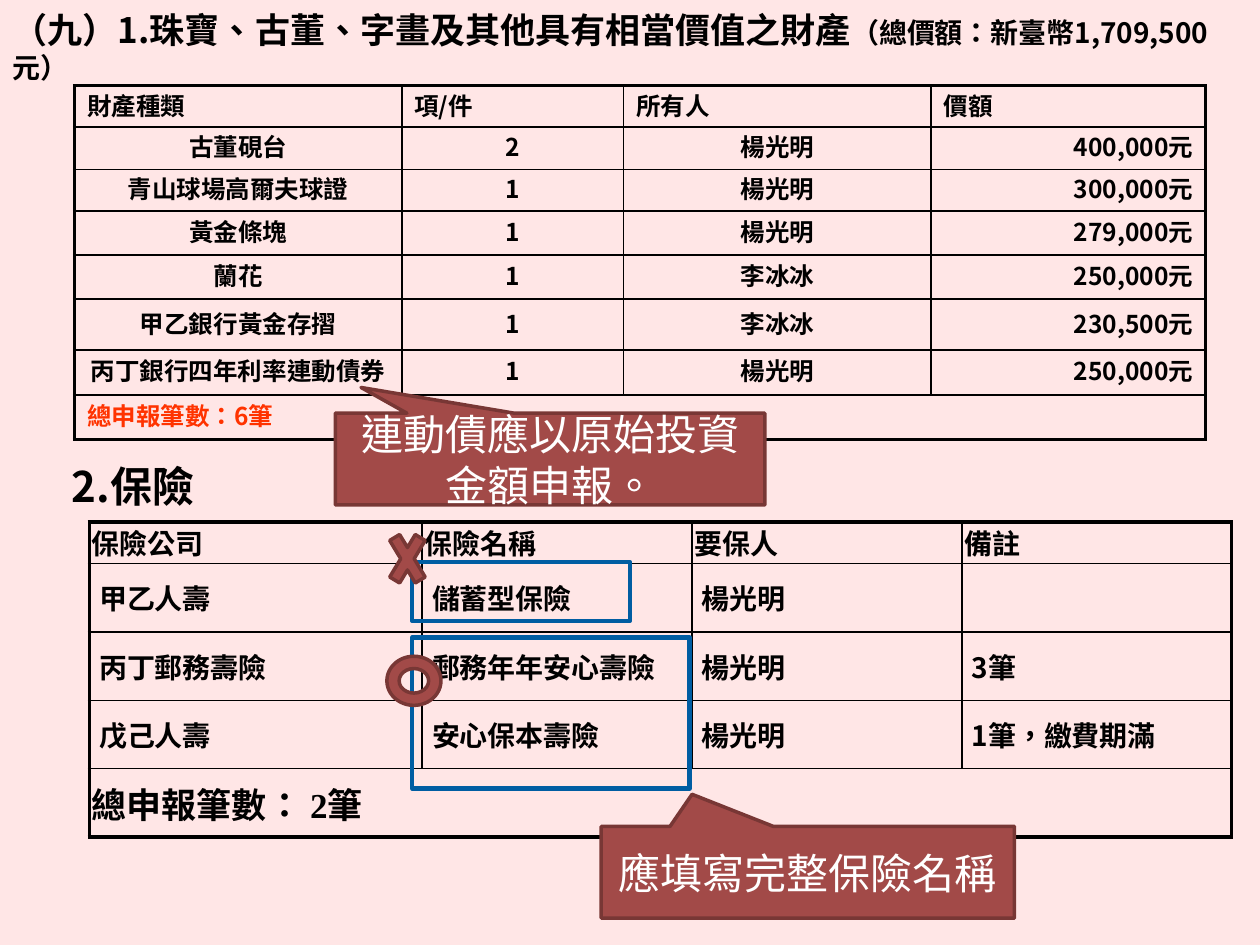
from lxml import etree
from pptx import Presentation
from pptx.dml.color import RGBColor
from pptx.enum.shapes import MSO_SHAPE
from pptx.enum.text import MSO_ANCHOR, MSO_AUTO_SIZE, PP_ALIGN
from pptx.oxml.ns import qn
from pptx.util import Cm, Pt

LEFT, CENTER, RIGHT, JUSTIFY = PP_ALIGN.LEFT, PP_ALIGN.CENTER, PP_ALIGN.RIGHT, PP_ALIGN.JUSTIFY
MIDDLE, NO_FIT = MSO_ANCHOR.MIDDLE, MSO_AUTO_SIZE.NONE
RECTANGLE, CALLOUT = MSO_SHAPE.RECTANGLE, MSO_SHAPE.RECTANGULAR_CALLOUT
CROSS, RING = MSO_SHAPE.MATH_MULTIPLY, MSO_SHAPE.DONUT

COLORS = {"background": "FFE6E6", "ink": "000000", "total": "FF3300", "frame": "005DA2",
          "mark": "A24A48", "mark_line": "783735", "white": "FFFFFF"}
COLORS_RGB = {name: RGBColor.from_string(value) for name, value in COLORS.items()}
SANS, SERIF = "Noto Sans CJK SC", "Times New Roman"


def add_text(para, text, size, color="ink", bold=True, latin=SANS):
    span = para.add_run()
    span.text = text
    span.font.name = latin
    span.font.size = Pt(size)
    span.font.bold = bold
    span.font.color.rgb = COLORS_RGB[color]
    properties = span.font._element
    properties.set("lang", "zh-TW")
    east_asian = etree.Element(qn("a:ea"), typeface=SANS)
    properties.find(qn("a:latin")).addnext(east_asian)


def make_table(left, top, widths, heights, outer):
    """Add an unfilled table with thin inner lines, a heavy frame and a merged last row."""
    rows, columns = len(heights), len(widths)
    table = page.shapes.add_table(rows, columns, Cm(left), Cm(top),
                                  Cm(sum(widths)), Cm(sum(heights))).table
    table.first_row = table.horz_banding = False
    for column, width in zip(table.columns, widths):
        column.width = Cm(width)
    for row, height in zip(table.rows, heights):
        row.height = Cm(height)
    table.cell(rows - 1, 0).merge(table.cell(rows - 1, columns - 1))
    for r in range(rows):
        for c in range(columns):
            cell = table.cell(r, c)
            cell.vertical_anchor = MIDDLE
            last = r == rows - 1
            edges = {"a:lnL": c == 0, "a:lnR": c == columns - 1 or last,
                     "a:lnT": r == 0, "a:lnB": last}
            for tag, heavy in edges.items():
                line = etree.SubElement(cell._tc.get_or_add_tcPr(), qn(tag),
                                        w=str(Pt(outer if heavy else 1)))
                fill = etree.SubElement(line, qn("a:solidFill"))
                etree.SubElement(fill, qn("a:srgbClr"), val=COLORS["ink"])
            cell.fill.background()
    return table


deck = Presentation()
deck.slide_width, deck.slide_height = Cm(25.4), Cm(19.05)
page = deck.slides.add_slide(deck.slide_layouts[1])
page.background.fill.solid()
page.background.fill.fore_color.rgb = COLORS_RGB["background"]

# Headings
headings = [
    (page.shapes.title, (0, 0.33, 25.4, 1.19),
     [("（九）1.珠寶、古董、字畫及其他具有相當價值之財產", 20),
      ("（總價額：新臺幣1,709,500元）", 16)]),
    (page.placeholders[1], (1.19, 9.14, 24.21, 1.3), [("2.保險", 24)]),
]
for box, bounds, spans in headings:
    box.left, box.top, box.width, box.height = map(Cm, bounds)
    frame = box.text_frame
    frame.word_wrap = True
    frame.auto_size = NO_FIT
    frame.vertical_anchor = MIDDLE
    para = frame.paragraphs[0]
    para.alignment = LEFT
    para.space_before = Pt(0)
    properties = para._p.get_or_add_pPr()
    properties.set("marL", "0")
    properties.set("indent", "0")
    etree.SubElement(properties, qn("a:buNone"))
    for text, size in spans:
        add_text(para, text, size)

# Valuables table
valuables = [
    ("財產種類", "項/件", "所有人", "價額"),
    ("古董硯台", "2", "楊光明", "400,000元"),
    ("青山球場高爾夫球證", "1", "楊光明", "300,000元"),
    ("黃金條塊", "1", "楊光明", "279,000元"),
    ("蘭花", "1", "李冰冰", "250,000元"),
    ("甲乙銀行黃金存摺", "1", "李冰冰", "230,500元"),
    ("丙丁銀行四年利率連動債券", "1", "楊光明", "250,000元"),
    ("總申報筆數：6筆",),
]
table = make_table(1.5, 1.73, [6.6, 4.47, 6.2, 5.54],
                   [0.81, 0.86, 0.81, 0.89, 0.89, 1.02, 0.91, 0.89], 2)
for r, values in enumerate(valuables):
    total = len(values) == 1
    for c, value in enumerate(values):
        para = table.cell(r, c).text_frame.paragraphs[0]
        para.line_spacing = 0.8
        if r == 0:
            para.alignment = JUSTIFY
        elif total:
            para.alignment = LEFT
        else:
            para.alignment = RIGHT if c == 3 else CENTER
        add_text(para, value, 14, "total" if total else "ink")

# Insurance table
insurance = [
    ("保險公司", "保險名稱", "要保人", "備註"),
    ("甲乙人壽", "儲蓄型保險", "楊光明", ""),
    ("丙丁郵務壽險", "郵務年年安心壽險", "楊光明", "3筆"),
    ("戊己人壽", "安心保本壽險", "楊光明", "1筆，繳費期滿"),
    ("總申報筆數： 2筆",),
]
table = make_table(1.8, 10.52, [6.71] + [5.44] * 3, [0.84] + [1.38] * 4, 2.25)
for r, values in enumerate(insurance):
    total = len(values) == 1
    detail = r > 0 and not total
    for c, value in enumerate(values):
        cell = table.cell(r, c)
        cell.margin_left = Cm(0.2 if detail else 0.05)
        cell.margin_right = Cm(0.05)
        cell.margin_top = cell.margin_bottom = 0
        if value:
            para = cell.text_frame.paragraphs[0]
            para.alignment = JUSTIFY
            add_text(para, value, 20 if total else 16, latin=SANS if detail else SERIF)

# Frames, marks and callouts: kind, bounds, callout tip, text
annotations = [
    (RECTANGLE, (8.31, 11.33, 4.39, 1.19), None, ""),
    (CROSS, (7.72, 10.44, 0.99, 1.65), None, ""),
    (RECTANGLE, (8.31, 12.85, 5.59, 3.05), None, ""),
    (RING, (7.8, 13.23, 1.09, 0.99), None, ""),
    (CALLOUT, (12.12, 16.66, 8.33, 1.85), (-0.28, -0.85), "應填寫完整保險名稱"),
    (CALLOUT, (6.76, 8.33, 8.66, 1.85), (-0.44, -0.78), "連動債應以原始投資金額申報。"),
]
for kind, bounds, tip, text in annotations:
    shape = page.shapes.add_shape(kind, *map(Cm, bounds))
    shape.shadow.inherit = False
    if kind == RECTANGLE:
        shape.fill.background()
        shape.line.color.rgb = COLORS_RGB["frame"]
        shape.line.width = Pt(2.5)
    else:
        shape.fill.solid()
        shape.fill.fore_color.rgb = COLORS_RGB["mark"]
        shape.line.color.rgb = COLORS_RGB["mark_line"]
        shape.line.width = Pt(2)
    if tip:
        shape.adjustments[0], shape.adjustments[1] = tip
        shape.text_frame.word_wrap = True
        shape.text_frame.vertical_anchor = MIDDLE
        para = shape.text_frame.paragraphs[0]
        para.alignment = CENTER
        add_text(para, text, 24, "white", bold=False)

deck.save("out.pptx")
